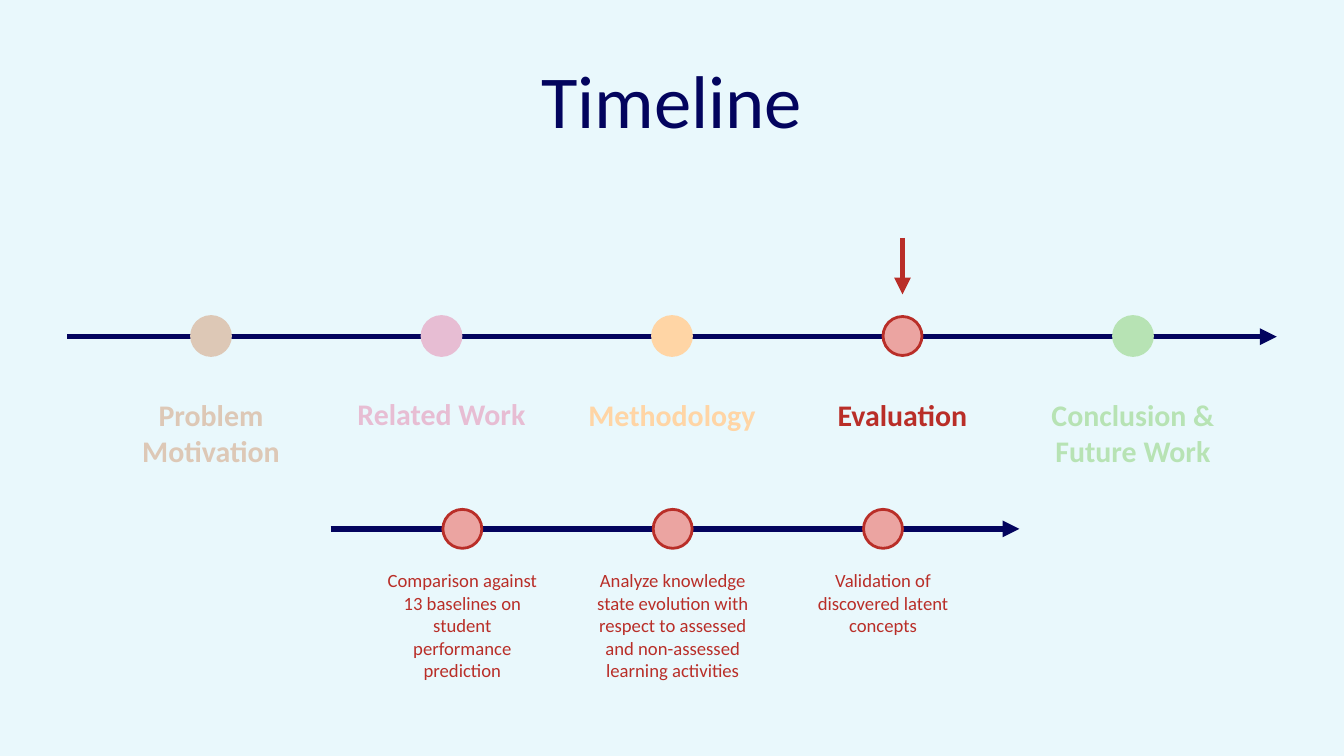
"""Build the timeline slide with the evaluation stage highlighted."""
import pptx
import pptx.dml.color
import pptx.enum.shapes
import pptx.enum.text
import pptx.oxml
import pptx.oxml.ns
import pptx.util

PX = 9144
COLORS = {
    "sky": "E9F8FC",
    "navy": "03045E",
    "red": "B92E28",
    "rose": "EBA4A1",
    "sand": "DDC8B6",
    "pink": "E7BDD3",
    "peach": "FFD5A5",
    "mint": "B7E3B4",
}
RGB = {name: pptx.dml.color.RGBColor.from_string(code) for name, code in COLORS.items()}
DOT = 58

deck = pptx.Presentation()
deck.slide_width = 2000 * PX
deck.slide_height = 1125 * PX
page = deck.slides.add_slide(deck.slide_layouts[6])
page.background.fill.solid()
page.background.fill.fore_color.rgb = RGB["sky"]


def write(text, *, center, top, width, height, size, color, bold=False):
    box = page.shapes.add_textbox((center - width // 2) * PX, top * PX, width * PX, height * PX)
    box.text_frame.word_wrap = True
    box.text_frame.auto_size = pptx.enum.text.MSO_AUTO_SIZE.SHAPE_TO_FIT_TEXT
    para = box.text_frame.paragraphs[0]
    para.alignment = pptx.enum.text.PP_ALIGN.CENTER
    span = para.add_run()
    span.text = text
    span.font.name = "Calibri"
    span.font.size = pptx.util.Pt(size)
    span.font.bold = bold
    span.font.color.rgb = RGB[color]


def draw_dot(center, top, fill, outline):
    dot = page.shapes.add_shape(
        pptx.enum.shapes.MSO_SHAPE.OVAL, (center - DOT // 2) * PX, top * PX, DOT * PX, DOT * PX
    )
    dot.shadow.inherit = False
    dot.fill.solid()
    dot.fill.fore_color.rgb = RGB[fill]
    dot.line.color.rgb = RGB[outline]
    dot.line.width = pptx.util.Pt(3)


write("Timeline", center=1000, top=75, width=1600, height=145, size=80, color="navy")

arrows = [
    (100, 501, 1900, 501, "navy"),
    (1343, 354, 1343, 438, "red"),
    (492, 787, 1517, 787, "navy"),
]
for x1, y1, x2, y2, color in arrows:
    arrow = page.shapes.add_connector(
        pptx.enum.shapes.MSO_CONNECTOR.STRAIGHT, x1 * PX, y1 * PX, x2 * PX, y2 * PX
    )
    arrow.line.color.rgb = RGB[color]
    arrow.line.width = pptx.util.Pt(6)
    head = pptx.oxml.parse_xml(f'<a:tailEnd {pptx.oxml.ns.nsdecls("a")} type="triangle"/>')
    arrow.line._get_or_add_ln().append(head)
    no_effects = pptx.oxml.parse_xml(f'<a:effectLst {pptx.oxml.ns.nsdecls("a")}/>')
    arrow._element.spPr.append(no_effects)

stages = [
    ("Problem Motivation", 586, 118, "sand", "sand"),
    ("Related Work", 584, 64, "pink", "pink"),
    ("Methodology", 586, 64, "peach", "peach"),
    ("Evaluation", 586, 64, "rose", "red"),
    ("Conclusion & Future Work", 586, 118, "mint", "mint"),
]
for index, (label, top, height, fill, accent) in enumerate(stages):
    center = 314 + 343 * index
    draw_dot(center, 471, fill, accent)
    write(label, center=center, top=top, width=308, height=height, size=32, color=accent, bold=True)

steps = [
    ("Comparison against 13 baselines on student performance prediction", 178),
    ("Analyze knowledge state evolution with respect to assessed and non-assessed learning activities", 178),
    ("Validation of discovered latent concepts", 111),
]
for index, (label, height) in enumerate(steps):
    center = 688 + 313 * index
    draw_dot(center, 758, "rose", "red")
    write(label, center=center, top=842, width=258, height=height, size=20, color="red")

deck.save("out.pptx")
